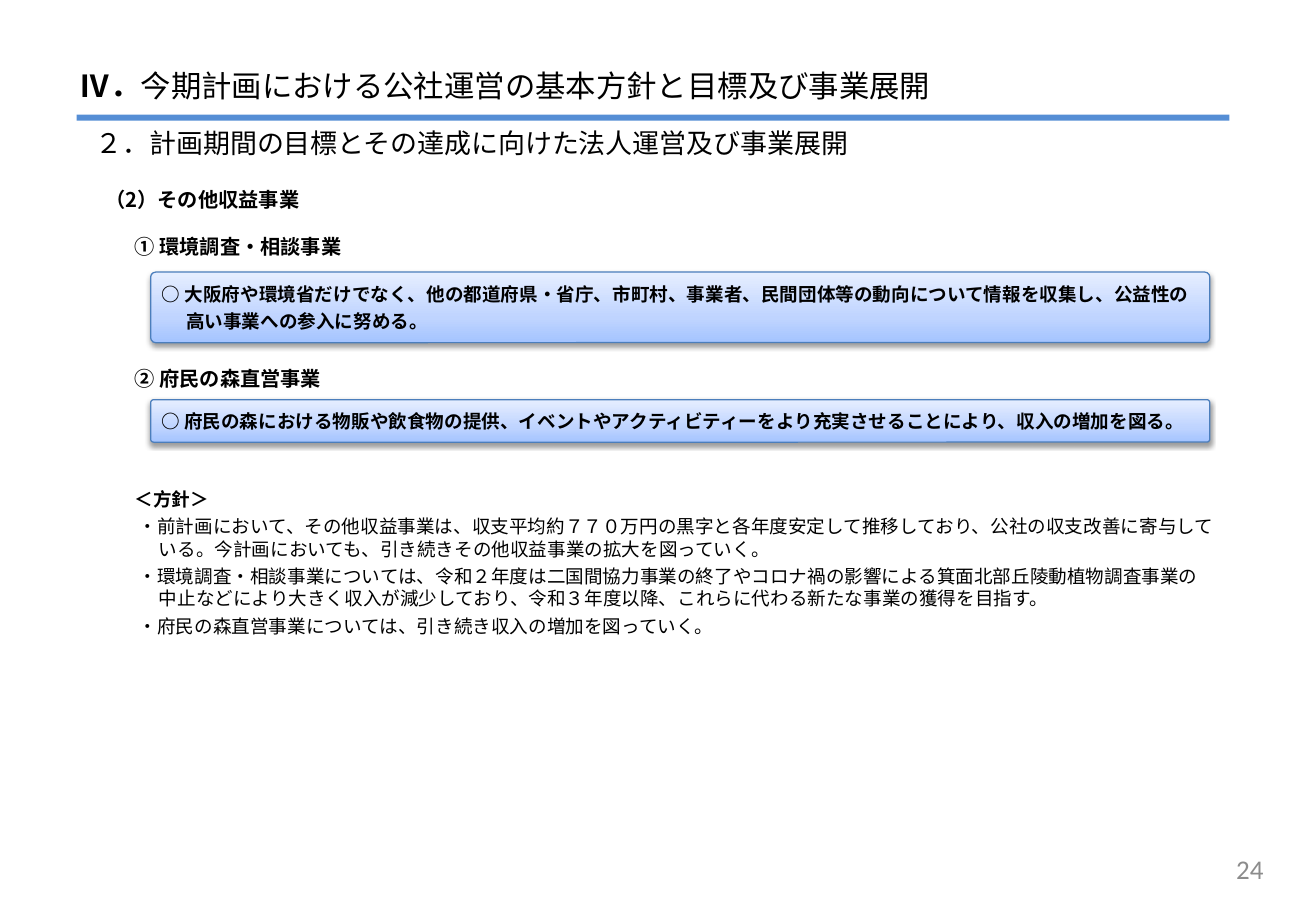
from dataclasses import dataclass

from lxml import etree
from pptx import Presentation
from pptx.dml.color import RGBColor
from pptx.enum.shapes import MSO_SHAPE
from pptx.enum.text import MSO_ANCHOR, MSO_AUTO_SIZE, PP_ALIGN
from pptx.oxml.ns import qn
from pptx.util import Pt

RECT, ROUND = MSO_SHAPE.RECTANGLE, MSO_SHAPE.ROUNDED_RECTANGLE
TOP, MIDDLE = MSO_ANCHOR.TOP, MSO_ANCHOR.MIDDLE
GROW, FIXED = MSO_AUTO_SIZE.SHAPE_TO_FIT_TEXT, MSO_AUTO_SIZE.NONE
LEFT, RIGHT = PP_ALIGN.LEFT, PP_ALIGN.RIGHT


@dataclass(frozen=True)
class Theme:
    font: str = "Noto Sans CJK JP"
    latin: str = "Calibri"
    ink: str = "000000"
    gray: str = "8C8C8C"
    rule: str = "558ED5"
    edge: str = "4B7EBC"
    fade: tuple = ((0, "A4C4FF"), (35, "BFD4FF"), (100, "E6EEFF"))
    title: int = 18
    head: int = 16
    item: int = 12
    body: int = 11
    hang: float = 14.4


def assign(target, values):
    for name, value in values.items():
        setattr(target, name, value)


def add_node(parent, tag, **values):
    node = etree.SubElement(parent, qn(tag))
    for name, value in values.items():
        node.set(name, str(value))
    return node


class Page:
    def __init__(self, slide, theme):
        self.slide, self.theme = slide, theme

    def add_text(self, par, text, size, bold=False, color=None, font=None):
        run = par.add_run()
        run.text = text
        face = font or self.theme.font
        assign(run.font, {"name": face, "size": Pt(size), "bold": bold})
        run.font.color.rgb = RGBColor.from_string(color or self.theme.ink)
        add_node(run.font._element, "a:ea", typeface=face)

    def indent(self, par):
        """Hang the wrapped lines under the first character after the mark."""
        props = par._p.get_or_add_pPr()
        props.set("marL", str(Pt(self.theme.hang)))
        props.set("indent", str(-Pt(self.theme.hang)))

    def frame(self, x, y, w, h, anchor=TOP, fit=GROW):
        box = self.slide.shapes.add_textbox(Pt(x), Pt(y), Pt(w), Pt(h))
        assign(box.text_frame, {"word_wrap": True, "auto_size": fit,
                                "vertical_anchor": anchor})
        return box.text_frame

    def label(self, text, x, y, w, h, size, bold=False):
        par = self.frame(x, y, w, h).paragraphs[0]
        self.add_text(par, text, size, bold)

    def title(self, mark, text, x, y, w, h):
        par = self.frame(x, y, w, h, MIDDLE, FIXED).paragraphs[0]
        self.add_text(par, mark, self.theme.title, True)
        self.add_text(par, text, self.theme.title)

    def number(self, text, x, y, w, h):
        par = self.frame(x, y, w, h, MIDDLE, FIXED).paragraphs[0]
        par.alignment = RIGHT
        self.add_text(par, text, self.theme.head, color=self.theme.gray,
                      font=self.theme.latin)

    def shape(self, kind, x, y, w, h):
        shape = self.slide.shapes.add_shape(kind, Pt(x), Pt(y), Pt(w), Pt(h))
        shape.shadow.inherit = False
        return shape

    def bar(self, x, y, w, h):
        bar = self.shape(RECT, x, y, w, h)
        bar.fill.solid()
        bar.fill.fore_color.rgb = RGBColor.from_string(self.theme.rule)
        bar.line.fill.background()

    def shade(self, shape):
        """Give the shape the three-stop fade and a soft drop shadow."""
        shape.fill.gradient()
        shape.fill.gradient_angle = 90
        props = shape._element.spPr
        stops = props.find(".//" + qn("a:gsLst"))
        for stop in list(stops):
            stops.remove(stop)
        for place, color in self.theme.fade:
            stop = add_node(stops, "a:gs", pos=place * 1000)
            add_node(stop, "a:srgbClr", val=color)
        drop = add_node(props.find(qn("a:effectLst")), "a:outerShdw",
                        blurRad=Pt(3.1), dist=Pt(1.6), dir=5400000,
                        rotWithShape=0)
        tint = add_node(drop, "a:srgbClr", val=self.theme.ink)
        add_node(tint, "a:alpha", val=38000)

    def panel(self, text, x, y, w, h):
        panel = self.shape(ROUND, x, y, w, h)
        panel.adjustments[0] = 0.07
        self.shade(panel)
        panel.line.color.rgb = RGBColor.from_string(self.theme.edge)
        panel.line.width = Pt(0.75)
        frame = panel.text_frame
        assign(frame, {"word_wrap": True, "vertical_anchor": TOP,
                       "margin_left": Pt(5.8), "margin_top": Pt(2.9),
                       "margin_right": Pt(8.6), "margin_bottom": Pt(3.6)})
        par = frame.paragraphs[0]
        assign(par, {"alignment": LEFT, "line_spacing": 1.2})
        self.indent(par)
        self.add_text(par, text, self.theme.body, True)

    def policy(self, head, points, x, y, w, h):
        frame = self.frame(x, y, w, h)
        self.add_text(frame.paragraphs[0], head, self.theme.body, True)
        for text in points:
            par = frame.add_paragraph()
            par.space_before = Pt(3)
            self.indent(par)
            self.add_text(par, text, self.theme.body)


POINTS = (
    " ・前計画において、その他収益事業は、収支平均約７７０万円の黒字と各年度安定して推移しており、"
    "公社の収支改善に寄与している。今計画においても、引き続きその他収益事業の拡大を図っていく。",
    " ・環境調査・相談事業については、令和２年度は二国間協力事業の終了やコロナ禍の影響による"
    "箕面北部丘陵動植物調査事業の中止などにより大きく収入が減少しており、令和３年度以降、"
    "これらに代わる新たな事業の獲得を目指す。",
    " ・府民の森直営事業については、引き続き収入の増加を図っていく。",
)

# Heading, its top, panel text, panel top and height
TASKS = (
    ("① 環境調査・相談事業", 135.4,
     "○ 大阪府や環境省だけでなく、他の都道府県・省庁、市町村、事業者、民間団体等の動向について"
     "情報を収集し、公益性の高い事業への参入に努める。", 161.3, 41.8),
    ("② 府民の森直営事業", 213.8,
     "○ 府民の森における物販や飲食物の提供、イベントやアクティビティーをより充実させることにより、"
     "収入の増加を図る。", 236.9, 25.2),
)


def main():
    deck = Presentation()
    assign(deck, {"slide_width": Pt(780), "slide_height": Pt(540)})
    theme = Theme()
    page = Page(deck.slides.add_slide(deck.slide_layouts[6]), theme)
    page.title("Ⅳ．", "今期計画における公社運営の基本方針と目標及び事業展開",
               40.3, 31, 621.4, 38.9)
    page.bar(45.4, 67.9, 683.3, 3.6)
    page.label("２．計画期間の目標とその達成に向けた法人運営及び事業展開",
               49.7, 71.3, 571.7, 26.6, theme.head)
    page.label("（2）その他収益事業", 55.4, 107.3, 460, 21.6, theme.item, True)
    for head, top, text, y, h in TASKS:
        page.label(head, 72.7, top, 460, 21.6, theme.item, True)
        page.panel(text, 89.3, y, 627.8, h)
    page.policy("＜方針＞", POINTS, 72.7, 285.8, 655.9, 96.5)
    page.number("24", 573.8, 500.4, 182.2, 28.8)
    deck.save("out.pptx")


if __name__ == "__main__":
    main()
